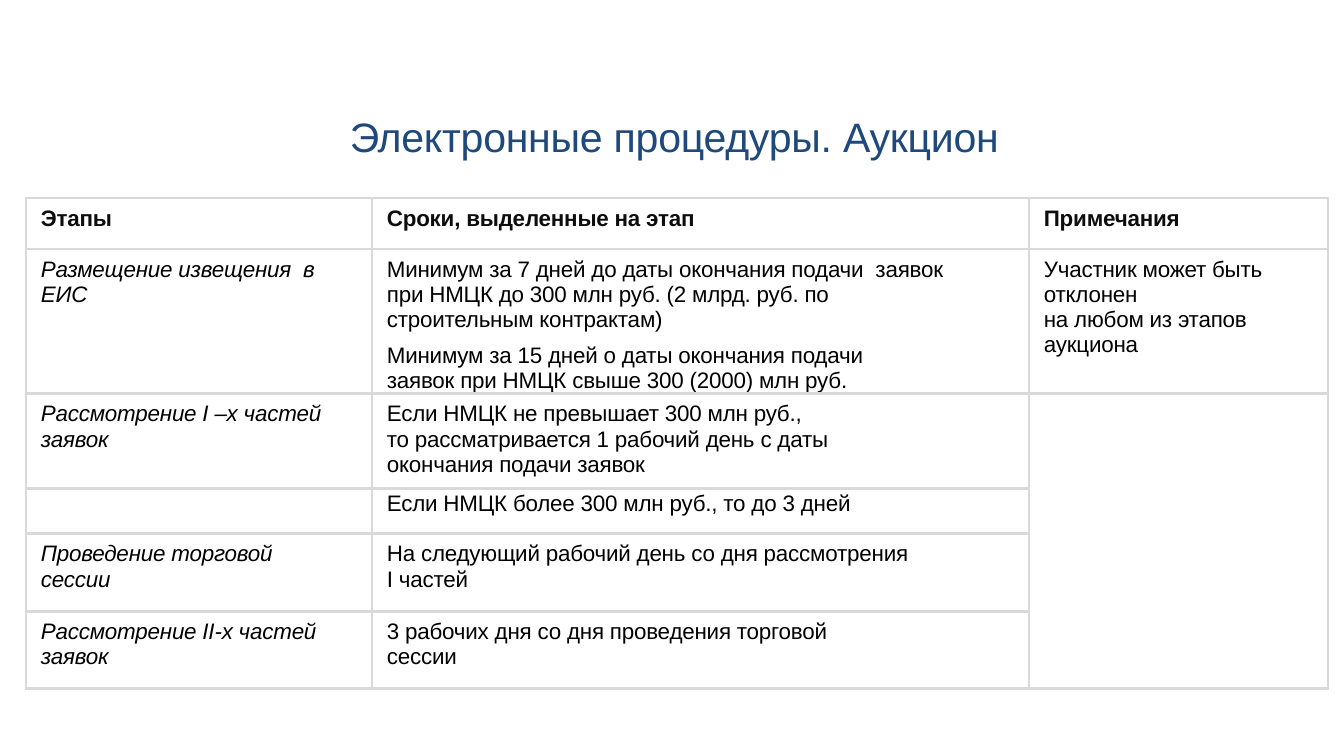
from lxml import etree
from pptx import Presentation
from pptx.dml.color import RGBColor
from pptx.enum.text import MSO_ANCHOR, MSO_AUTO_SIZE, PP_ALIGN
from pptx.oxml.ns import qn
from pptx.util import Emu, Pt

CENTER = PP_ALIGN.CENTER
MIDDLE = MSO_ANCHOR.MIDDLE
FIXED_SIZE = MSO_AUTO_SIZE.NONE
TITLE_ONLY = 5
PX_PER_INCH = 134.4

COLUMN_WIDTHS = [346, 657, 299]
ROW_HEIGHTS = [51, 144, 95, 45, 78, 77]
ROWS = [
    ["Этапы", "Сроки, выделенные на этап", "Примечания"],
    ["Размещение извещения  в ЕИС",
     "Минимум за 7 дней до даты окончания подачи  заявок "
     "при НМЦК до 300 млн руб. (2 млрд. руб. по строительным контрактам)\n"
     "Минимум за 15 дней о даты окончания подачи\n"
     "заявок при НМЦК свыше 300 (2000) млн руб.",
     "Участник может быть отклонен\nна любом из этапов аукциона"],
    ["Рассмотрение I –х частей заявок",
     "Если НМЦК не превышает 300 млн руб.,\n"
     "то рассматривается 1 рабочий день с даты окончания подачи заявок", ""],
    ["", "Если НМЦК более 300 млн руб., то до 3 дней", ""],
    ["Проведение торговой\nсессии",
     "На следующий рабочий день со дня рассмотрения\nI частей", ""],
    ["Рассмотрение II-х частей\nзаявок",
     "3 рабочих дня со дня проведения торговой\nсессии", ""],
]


def px(length):
    return Emu(round(length * 914400 / PX_PER_INCH))


def color(value):
    return RGBColor.from_string(value)


class Page:
    font_name = "Arial"
    title_color = "1F497D"
    header_color = "0D0D0D"
    body_color = "000000"
    border_color = "D9D9D9"

    def __init__(self, deck):
        self.slide = deck.slides.add_slide(deck.slide_layouts[TITLE_ONLY])

    def format_text(self, frame, size, text_color, bold=False, italic=False):
        for para in frame.paragraphs:
            for span in para.runs:
                span.font.name = self.font_name
                span.font.size = Pt(size)
                span.font.bold = bold
                span.font.italic = italic
                span.font.color.rgb = color(text_color)
                span._r.get_or_add_rPr().set("spc", "-10")

    def title(self, text, left, top, width, height):
        box = self.slide.shapes.title
        box.left, box.top, box.width, box.height = map(px, (left, top, width, height))
        frame = box.text_frame
        frame.text = text
        frame.auto_size = FIXED_SIZE
        frame.word_wrap = True
        frame.vertical_anchor = MIDDLE
        frame.margin_left = frame.margin_right = frame.margin_bottom = 0
        frame.margin_top = px(1)
        frame.paragraphs[0].alignment = CENTER
        self.format_text(frame, 22, self.title_color)

    def border(self, cell, sides):
        properties = cell._tc.get_or_add_tcPr()
        for side in "LRTB":
            line = etree.SubElement(properties, qn(f"a:ln{side}"), w=str(Pt(1.5)))
            if side in sides:
                fill = etree.SubElement(line, qn("a:solidFill"))
                etree.SubElement(fill, qn("a:srgbClr"), val=self.border_color)
            else:
                etree.SubElement(line, qn("a:noFill"))

    def cell(self, cell, text, right_margin, top_margin, sides, **style):
        cell.margin_left, cell.margin_right = px(15), px(right_margin)
        cell.margin_top, cell.margin_bottom = px(top_margin), 0
        self.border(cell, sides)
        cell.fill.background()
        cell.text_frame.text = text
        self.format_text(cell.text_frame, 12, **style)

    def table(self, left, top):
        frame = self.slide.shapes.add_table(
            len(ROWS), len(COLUMN_WIDTHS), px(left), px(top),
            px(sum(COLUMN_WIDTHS)), px(sum(ROW_HEIGHTS)))
        table = frame.table
        table.first_row = table.horz_banding = False
        for column, width in zip(table.columns, COLUMN_WIDTHS):
            column.width = px(width)
        for row, height in zip(table.rows, ROW_HEIGHTS):
            row.height = px(height)

        for r, texts in enumerate(ROWS):
            for c, text in enumerate(texts):
                # The lower notes cells read as one open area
                sides = "LRTB"
                if c == 2 and r >= 2:
                    sides = "LR" + ("T" if r == 2 else "") + ("B" if r == 5 else "")
                right_margin = (20, 100 if r == 2 else 60, 0)[c]
                self.cell(table.cell(r, c), text, right_margin, 3 if r == 3 else 8, sides,
                          text_color=self.body_color if r else self.header_color,
                          bold=r == 0, italic=r > 0 and c == 0)
        return table


def main():
    deck = Presentation()
    deck.slide_width, deck.slide_height = px(1344), px(756)
    page = Page(deck)

    # Heading
    page.title("Электронные процедуры. Аукцион", 344, 110, 661, 51)

    # Stages and deadlines
    table = page.table(26, 198)
    second_deadline = table.cell(1, 1).text_frame.paragraphs[1]
    second_deadline.space_before = Pt(6)

    deck.save("out.pptx")


if __name__ == "__main__":
    main()
